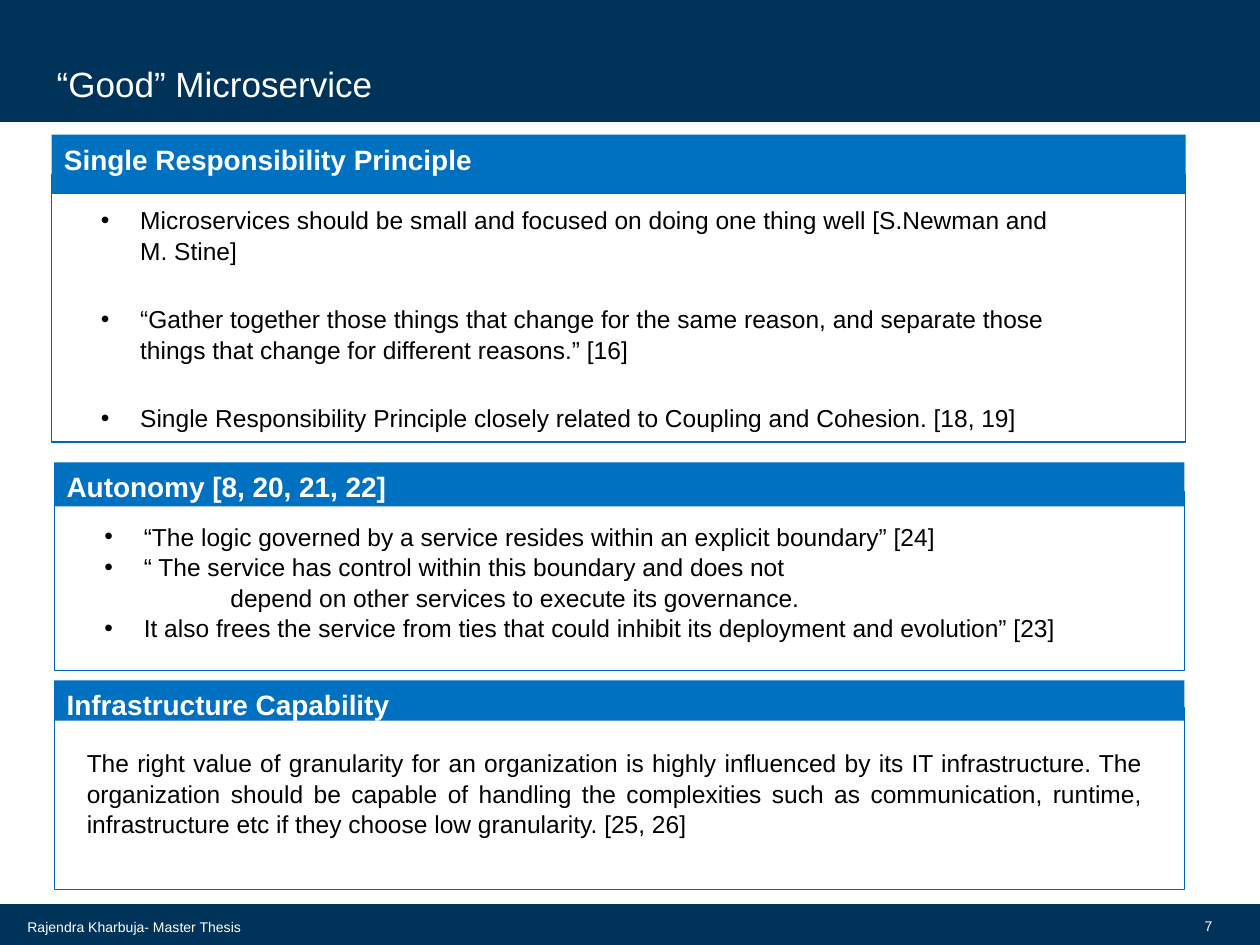
from lxml.etree import SubElement
from pptx import Presentation
from pptx.dml.color import RGBColor
from pptx.enum.shapes import MSO_SHAPE as Shape
from pptx.enum.text import MSO_ANCHOR as Anchor, MSO_AUTO_SIZE as AutoSize, PP_ALIGN as Align
from pptx.oxml.ns import qn
from pptx.util import Pt

NAVY = RGBColor(0x00, 0x33, 0x59)
HEADER_BLUE = RGBColor(0x00, 0x70, 0xC0)
FRAME_BLUE = RGBColor(0x00, 0x65, 0xBD)
WHITE = RGBColor(0xFF, 0xFF, 0xFF)
BLACK = RGBColor(0x00, 0x00, 0x00)

WIDTH, HEIGHT = 720, 540
BULLET_INDENT = 22.5
CONTINUATION_INDENT = 72

# heading, left, width, header top, header height, frame top, frame height
PANELS = [
    ("Single Responsibility Principle", 29.5, 648, 77, 33.8, 100, 152.6),
    ("Autonomy [8, 20, 21, 22]", 31, 645.8, 264.2, 25.2, 280.8, 102.2),
    ("Infrastructure Capability", 31, 645.8, 388.8, 23, 404.6, 103.7),
]

# each item: is it bulleted, text
RESPONSIBILITY = [
    (True, "Microservices should be small and focused on doing one thing well "
           "[S.Newman and M. Stine]"),
    (True, "“Gather together those things that change for the same reason, and "
           "separate those things that change for different reasons.” [16]"),
    (True, "Single Responsibility Principle closely related to Coupling and "
           "Cohesion. [18, 19]"),
]
AUTONOMY = [
    (True, "“The logic governed by a service resides within an explicit boundary” [24]"),
    (True, "“ The service has control within this boundary and does not"),
    (False, "depend on other services to execute its governance."),
    (True, "It also frees the service from ties that could inhibit its "
           "deployment and evolution” [23]"),
]
INFRASTRUCTURE = (
    "The right value of granularity for an organization is highly influenced by "
    "its IT infrastructure. The organization should be capable of handling the "
    "complexities such as communication, runtime, infrastructure etc if they "
    "choose low granularity. [25, 26]"
)


class SlideBuilder:
    font_name = "Arial"
    line_spacing = 1.04

    def __init__(self, slide):
        self.slide = slide

    def style(self, paragraph, size, color, bold=False, align=Align.LEFT, before=0):
        paragraph.alignment = align
        paragraph.line_spacing = self.line_spacing
        paragraph.space_before = Pt(before)
        font = paragraph.font
        font.name, font.size, font.bold = self.font_name, Pt(size), bold
        font.color.rgb = color

    def place(self, shape, left, top, width, height):
        shape.left, shape.top = Pt(left), Pt(top)
        shape.width, shape.height = Pt(width), Pt(height)

    def rectangle(self, left, top, width, height, fill=None, line=None, line_width=0.75):
        shape = self.slide.shapes.add_shape(
            Shape.RECTANGLE, Pt(left), Pt(top), Pt(width), Pt(height))
        shape.shadow.inherit = False
        if fill is None:
            shape.fill.background()
        else:
            shape.fill.solid()
            shape.fill.fore_color.rgb = fill
        if line is None:
            shape.line.fill.background()
        else:
            shape.line.color.rgb = line
            shape.line.width = Pt(line_width)
        return shape

    def band(self, top, height):
        """Draw a full-width navy band behind everything else."""
        element = self.rectangle(0, top, WIDTH, height, NAVY, NAVY, 1.35).element
        element.getparent().insert(2, element)

    def title(self, text, *box):
        shape = self.slide.shapes.title
        self.place(shape, *box)
        frame = shape.text_frame
        frame.text = text
        frame.auto_size = AutoSize.NONE
        frame.vertical_anchor = Anchor.BOTTOM
        frame.margin_top = frame.margin_bottom = 0
        self.style(frame.paragraphs[0], 20, WHITE)

    def panel(self, heading, left, width, header_top, header_height, frame_top, frame_height):
        self.rectangle(left, frame_top, width, frame_height, line=FRAME_BLUE)
        header = self.rectangle(left, header_top, width, header_height, HEADER_BLUE)
        header.text_frame.text = heading
        header.text_frame.vertical_anchor = Anchor.TOP
        self.style(header.text_frame.paragraphs[0], 16, WHITE, bold=True)

    def bullet_list(self, index, items, *box, gap=0):
        shape = self.slide.placeholders[index]
        self.place(shape, *box)
        frame = shape.text_frame
        frame.text = "\n".join(text for _, text in items)
        frame.auto_size = AutoSize.NONE
        frame.vertical_anchor = Anchor.TOP
        for number, (paragraph, (bulleted, _)) in enumerate(zip(frame.paragraphs, items)):
            properties = paragraph._p.get_or_add_pPr()
            indent = BULLET_INDENT if bulleted else CONTINUATION_INDENT
            properties.set("marL", str(Pt(indent)))
            properties.set("indent", str(Pt(-indent) if bulleted else 0))
            if bulleted:
                SubElement(properties, qn("a:buFont"), typeface=self.font_name)
                SubElement(properties, qn("a:buChar"), char="•")
            else:
                SubElement(properties, qn("a:buNone"))
            self.style(paragraph, 14, BLACK, before=gap if number else 0)

    def text(self, text, *box, size=8, color=WHITE, align=Align.LEFT, anchor=Anchor.MIDDLE):
        frame = self.slide.shapes.add_textbox(*map(Pt, box)).text_frame
        frame.word_wrap = True
        frame.vertical_anchor = anchor
        frame.text = text
        self.style(frame.paragraphs[0], size, color, align=align)


def main():
    presentation = Presentation()
    presentation.slide_width, presentation.slide_height = Pt(WIDTH), Pt(HEIGHT)
    two_content = presentation.slide_layouts[3]
    builder = SlideBuilder(presentation.slides.add_slide(two_content))

    builder.band(0, 68.8)
    builder.band(517, 23)
    builder.title("“Good” Microservice", 25.2, 31.7, 593.3, 28.1)
    for panel in PANELS:
        builder.panel(*panel)
    builder.bullet_list(1, RESPONSIBILITY, 50.4, 113, 568, 139, gap=21.6)
    builder.bullet_list(2, AUTONOMY, 52.5, 293.8, 566, 88)
    builder.text(INFRASTRUCTURE, 42.5, 423.4, 617.8, 57.6, size=14, color=BLACK,
                 align=Align.JUSTIFY, anchor=Anchor.TOP)
    builder.text("Rajendra Kharbuja- Master Thesis", 8.6, 518.4, 153.4, 22.3)
    builder.text("7", 680.4, 517.7, 19.5, 22.3, align=Align.RIGHT)

    presentation.save("out.pptx")


if __name__ == "__main__":
    main()
